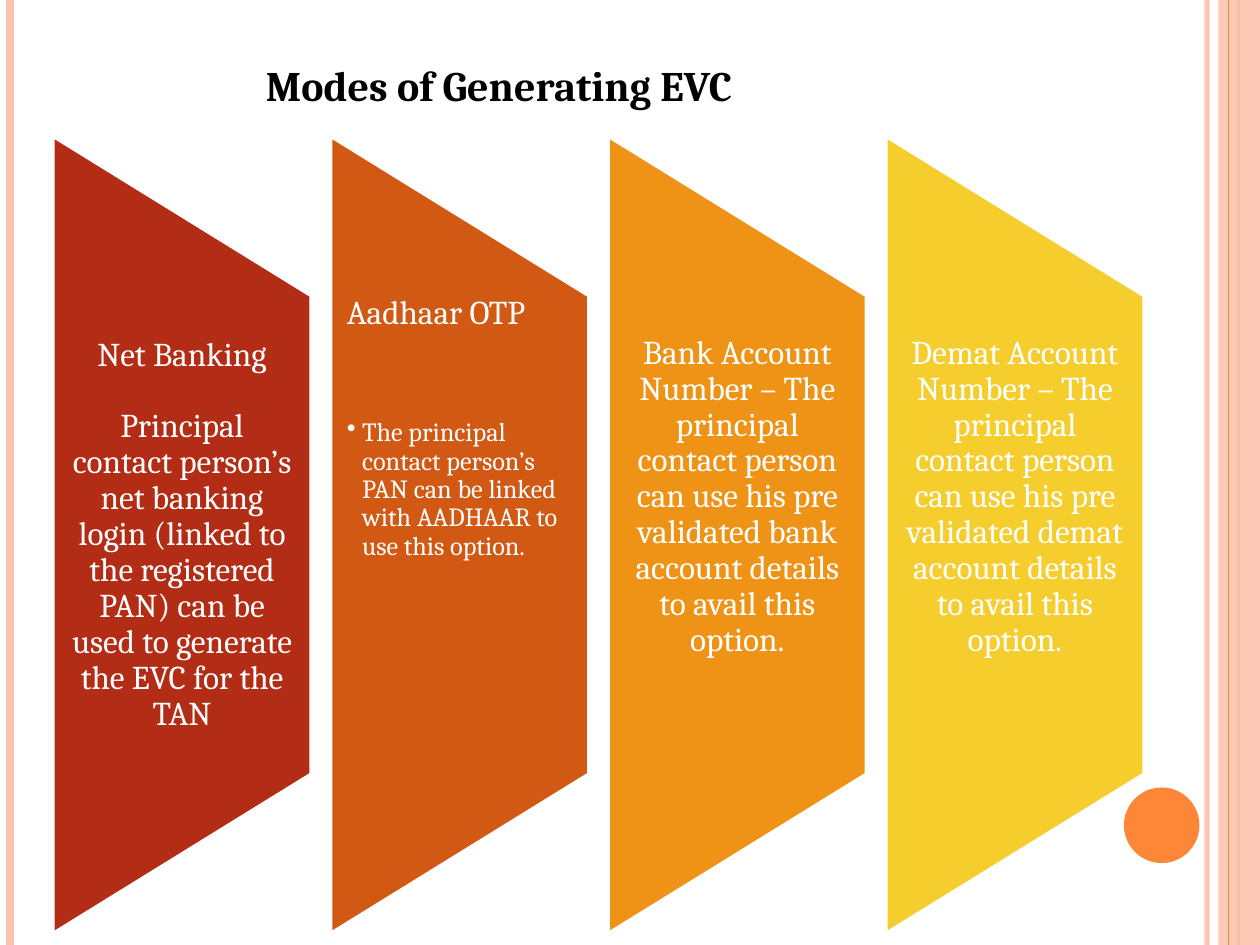
from dataclasses import dataclass

import pptx
import pptx.dml.color
import pptx.enum.shapes
import pptx.enum.text
import pptx.oxml.ns
import pptx.util
from lxml import etree

Inches = pptx.util.Inches
Pt = pptx.util.Pt
Shape = pptx.enum.shapes.MSO_SHAPE
Align = pptx.enum.text.PP_ALIGN
Anchor = pptx.enum.text.MSO_ANCHOR


@dataclass(frozen=True)
class Theme:
    """Colours, font and type sizes of the slide."""
    font: str = "Cambria"
    ink: str = "000000"
    paper: str = "FFFFFF"
    accent: str = "FE8637"
    tint: str = "FEC3AE"
    columns: tuple = ("B32C16", "D25914", "EE9316", "F5CD2D")
    title: int = 24
    body: int = 19
    detail: int = 15


@dataclass(frozen=True)
class Box:
    """A region measured in inches."""
    left: float
    top: float
    width: float
    height: float

    def lengths(self):
        """Return the four sides as slide lengths."""
        return [Inches(side) for side in (self.left, self.top, self.width, self.height)]


THEME = Theme()

MODES = (
    ("Net Banking",
     "Principal contact person’s net banking login (linked to the registered PAN) "
     "can be used to generate the EVC for the TAN"),
    ("Aadhaar OTP",
     "The principal contact person’s PAN can be linked with AADHAAR to use this option."),
    ("Bank Account Number – The principal contact person can use his pre validated "
     "bank account details to avail this option.",),
    ("Demat Account Number – The principal contact person can use his pre validated "
     "demat account details to avail this option.",),
)


def rgb(code):
    """Turn a hex code into a colour."""
    return pptx.dml.color.RGBColor.from_string(code)


def add_child(parent, tag, **attributes):
    """Append a drawing element with the given attributes."""
    return etree.SubElement(parent, pptx.oxml.ns.qn(tag), **attributes)


def set_opacity(fill_owner, percent):
    """Make the solid colour under an element partly transparent."""
    colour = fill_owner.find(".//" + pptx.oxml.ns.qn("a:srgbClr"))
    add_child(colour, "a:alpha", val=str(percent * 1000))


def add_filled(slide, kind, box, colour):
    """Add a flat preset shape without an outline."""
    shape = slide.shapes.add_shape(kind, *box.lengths())
    shape.shadow.inherit = False
    shape.fill.solid()
    shape.fill.fore_color.rgb = rgb(colour)
    shape.line.fill.background()
    return shape


def add_rule(slide, x, box, colour, weight):
    """Add a vertical line over the full height of a box."""
    across, top, bottom = Inches(x), Inches(box.top), Inches(box.top + box.height)
    rule = slide.shapes.add_connector(
        pptx.enum.shapes.MSO_CONNECTOR.STRAIGHT, across, top, across, bottom)
    rule.line.color.rgb = rgb(colour)
    rule.line.width = Pt(weight)
    add_child(rule.element.spPr, "a:effectLst")
    return rule


def add_text(slide, box, paragraphs, size, colour, align, bold=False):
    """Add a wrapped text box with one style and return its frame."""
    frame = slide.shapes.add_textbox(*box.lengths()).text_frame
    frame.word_wrap = True
    frame.text = "\n".join(paragraphs)
    for paragraph in frame.paragraphs:
        paragraph.alignment = align
        font = paragraph.runs[0].font
        font.name, font.size, font.bold = THEME.font, Pt(size), bold
        font.color.rgb = rgb(colour)
    return frame


def draw_frame(slide, box):
    """Draw the border lines, the right band and the round badge."""
    right = box.left + box.width
    inner = add_rule(slide, right - 0.42, box, THEME.tint, 3)
    set_opacity(inner.element.spPr, 93)
    add_rule(slide, box.left + 0.08, box, THEME.tint, 4.5)
    add_rule(slide, right - 0.17, box, THEME.accent, 1.5)
    band = add_filled(slide, Shape.RECTANGLE,
                      Box(right - 0.33, box.top, 0.33, box.height), THEME.tint)
    set_opacity(band.element.spPr, 87)
    add_rule(slide, right - 0.25, box, THEME.accent, 0.75)
    add_filled(slide, Shape.OVAL, Box(right - 1.08, box.top + 6.25, 0.6, 0.6), THEME.accent)


def draw_title(slide, box):
    """Write the slide title."""
    add_text(slide, box, ["Modes of Generating EVC"], THEME.title, THEME.ink,
             Align.CENTER, bold=True)


def make_bullet(paragraph):
    """Turn a paragraph into a smaller hanging bullet."""
    paragraph.level = 1
    paragraph.runs[0].font.size = Pt(THEME.detail)
    properties = paragraph.runs[0].font._element.getparent().getparent().get_or_add_pPr()
    properties.set("marL", str(Inches(0.12)))
    properties.set("indent", str(Inches(-0.12)))
    add_child(properties, "a:buChar", char="•")


def draw_mode(slide, box, paragraphs, colour, bulleted):
    """Draw one turned trapezoid with its text in the middle three fifths."""
    turned = Box(box.left + (box.width - box.height) / 2,
                 box.top + (box.height - box.width) / 2, box.height, box.width)
    panel = add_filled(slide, Shape.FLOWCHART_MANUAL_OPERATION, turned, colour)
    panel.rotation = 270
    panel.line.color.rgb = rgb(THEME.paper)
    panel.line.width = Pt(2)

    inside = Box(box.left, box.top + box.height * 0.2, box.width, box.height * 0.6)
    frame = add_text(slide, inside, paragraphs, THEME.body, THEME.paper,
                     Align.LEFT if bulleted else Align.CENTER)
    frame.margin_left = frame.margin_right = Inches(0.13)
    frame.margin_top = 0
    frame.margin_bottom = Inches(0.6 if len(paragraphs) == 1 else 0)
    frame.vertical_anchor = Anchor.TOP if bulleted else Anchor.MIDDLE
    for paragraph in frame.paragraphs:
        paragraph.line_spacing = 0.9
    if len(paragraphs) > 1:
        frame.paragraphs[0].space_after = Pt(50 if bulleted else 20.5)
    if bulleted:
        make_bullet(frame.paragraphs[1])


def draw_modes(slide, box):
    """Spread the modes evenly across a box."""
    width = 2.05
    pitch = (box.width - width) / (len(MODES) - 1)
    for index, (paragraphs, colour) in enumerate(zip(MODES, THEME.columns)):
        column = Box(box.left + index * pitch, box.top, width, box.height)
        draw_mode(slide, column, paragraphs, colour, bulleted=index == 1)


def main():
    """Build and save the slide."""
    deck = pptx.Presentation()
    deck.slide_width, deck.slide_height = Inches(10), Inches(7.5)
    slide = deck.slides.add_slide(deck.slide_layouts[6])
    draw_frame(slide, Box(0, 0, 10, 7.5))
    draw_title(slide, Box(0.75, 0.42, 6.42, 0.5))
    draw_modes(slide, Box(0.42, 1.08, 8.66, 6.33))
    deck.save("out.pptx")


if __name__ == "__main__":
    main()
